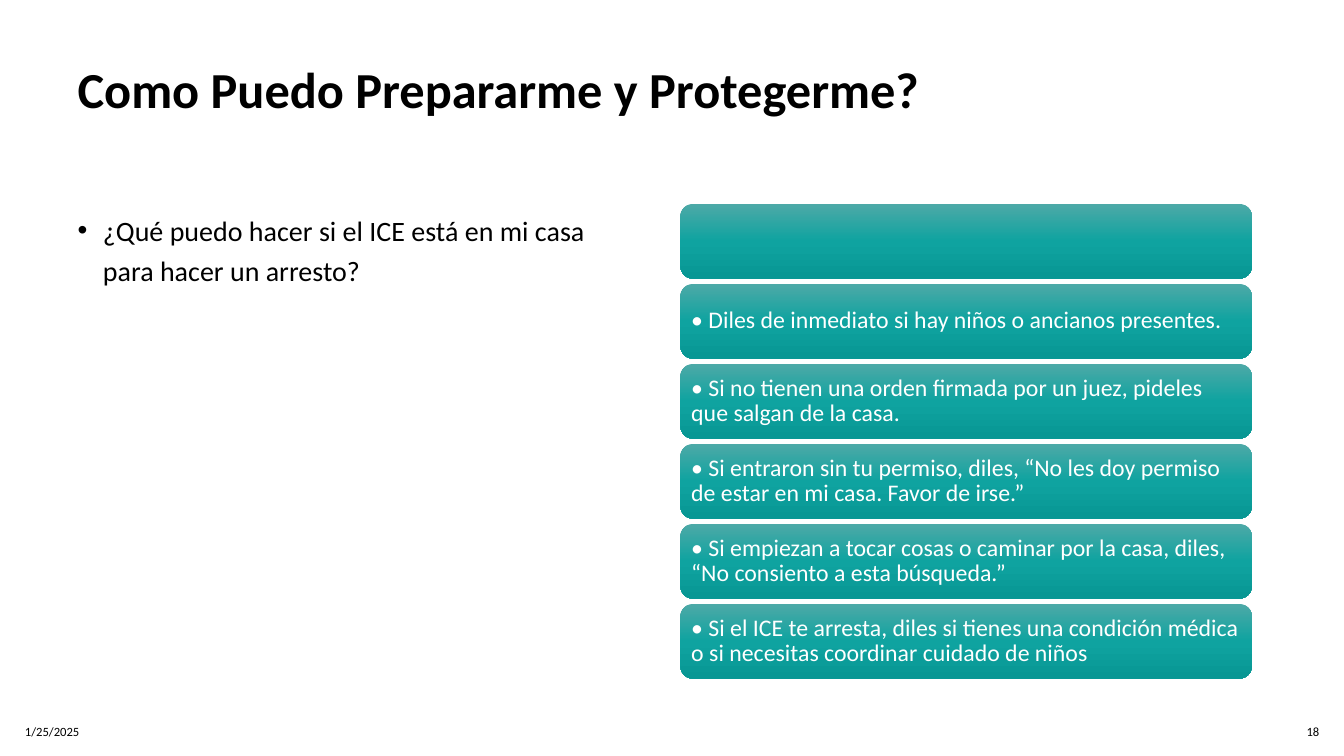
from copy import deepcopy

from lxml.etree import SubElement
from pptx import Presentation
from pptx.dml.color import RGBColor as Rgb
from pptx.enum.shapes import MSO_SHAPE as Preset
from pptx.enum.text import MSO_ANCHOR as Anchor, MSO_AUTO_SIZE as AutoSize, PP_ALIGN as Align
from pptx.oxml.ns import qn
from pptx.util import Cm, Pt

COLORS = {
    "ink": "000000",
    "card_text": "FFFFFF",
    "card_top": "4DA9A7",
    "card_middle": "0FA3A0",
    "card_bottom": "089794",
}
FONT = "Calibri"
ADVICE = [
    "",
    "• Diles de inmediato si hay niños o ancianos presentes.",
    "• Si no tienen una orden firmada por un juez, pideles que salgan de la casa.",
    "• Si entraron sin tu permiso, diles, “No les doy permiso de estar en mi casa. Favor de irse.”",
    "• Si empiezan a tocar cosas o caminar por la casa, diles, “No consiento a esta búsqueda.”",
    "• Si el ICE te arresta, diles si tienes una condición médica o si necesitas coordinar cuidado de niños",
]


def apply(target, **values):
    """Set each given attribute on the target."""
    for attribute, value in values.items():
        setattr(target, attribute, value)


def place(part, box):
    """Move a part to a box of left, top, width and height in centimetres."""
    for side, length in zip(("left", "top", "width", "height"), box):
        setattr(part, side, Cm(length))


def write(part, wording, size, color="ink", bold=False, anchor=Anchor.TOP, **layout):
    """Fill a part with one formatted paragraph and return the paragraph."""
    frame = part.text_frame
    apply(frame, word_wrap=True, auto_size=AutoSize.NONE, vertical_anchor=anchor)
    paragraph = frame.paragraphs[0]
    apply(paragraph, **{"alignment": Align.LEFT, **layout})
    if wording:
        run = paragraph.add_run()
        run.text = wording
        apply(run.font, name=FONT, size=Pt(size), bold=bold)
        run.font.color.rgb = Rgb.from_string(COLORS[color])
    return paragraph


def add_heading(slide, box):
    """Write the slide title."""
    heading = slide.shapes.title
    place(heading, box)
    write(heading, "Como Puedo Prepararme y Protegerme?", 36, bold=True, line_spacing=0.9)


def add_question(slide, box):
    """Write the bulleted question in the body placeholder."""
    question = slide.placeholders[1]
    place(question, box)
    paragraph = write(question, "¿Qué puedo hacer si el ICE está en mi casa para hacer un arresto?",
                      20, line_spacing=1.2, space_before=Pt(10))
    properties = paragraph._p.get_or_add_pPr()
    indent = Cm(0.64)
    properties.set("marL", str(indent))
    properties.set("indent", str(-indent))
    SubElement(properties, qn("a:buFont")).set("typeface", "Arial")
    SubElement(properties, qn("a:buChar")).set("char", "•")


def shade(card):
    """Give a card its three-stop vertical gradient."""
    card.fill.gradient()
    card.fill.gradient_angle = 270
    stop_list = card._element.spPr.find(qn("a:gradFill")).find(qn("a:gsLst"))
    stop_list.append(deepcopy(stop_list[0]))
    tones = ("card_top", "card_middle", "card_bottom")
    for stop, tone, position in zip(card.fill.gradient_stops, tones, (0, 0.5, 1)):
        stop.color.rgb = Rgb.from_string(COLORS[tone])
        stop.position = position


def add_advice(slide, box, card_height=1.88):
    """Stack the advice cards evenly over the box."""
    left, top, width, height = box
    pitch = (height - card_height) / (len(ADVICE) - 1)
    for row, advice in enumerate(ADVICE):
        card = slide.shapes.add_shape(Preset.ROUNDED_RECTANGLE, 0, 0, 0, 0)
        place(card, (left, top + row * pitch, width, card_height))
        card.shadow.inherit = False
        card.line.fill.background()
        shade(card)
        sides = ("left", "top", "right", "bottom")
        apply(card.text_frame, **{f"margin_{side}": Cm(0.18) for side in sides})
        write(card, advice, 17, "card_text", anchor=Anchor.MIDDLE, line_spacing=0.9)


def add_footer(slide, box, number_width=1.2):
    """Write the date at the left and the slide number at the right of the box."""
    left, top, width, height = box
    number_left = left + width - number_width
    entries = (
        ("1/25/2025", left, 9.7, Align.LEFT),
        ("18", number_left, number_width, Align.RIGHT),
    )
    for wording, entry_left, entry_width, alignment in entries:
        entry = slide.shapes.add_textbox(0, 0, 0, 0)
        place(entry, (entry_left, top, entry_width, height))
        write(entry, wording, 9, anchor=Anchor.MIDDLE, alignment=alignment)


def main():
    """Build the slide and save it."""
    deck = Presentation()
    apply(deck, slide_width=Cm(33.87), slide_height=Cm(19.05))
    slide = deck.slides.add_slide(deck.slide_layouts[1])
    add_heading(slide, (1.7, 1.52, 29.85, 3.15))
    add_question(slide, (1.7, 5.08, 14.4, 12.1))
    add_footer(slide, (0.38, 17.93, 33.12, 1.02))
    add_advice(slide, (17.15, 5.14, 14.4, 11.96))
    deck.save("out.pptx")


if __name__ == "__main__":
    main()
